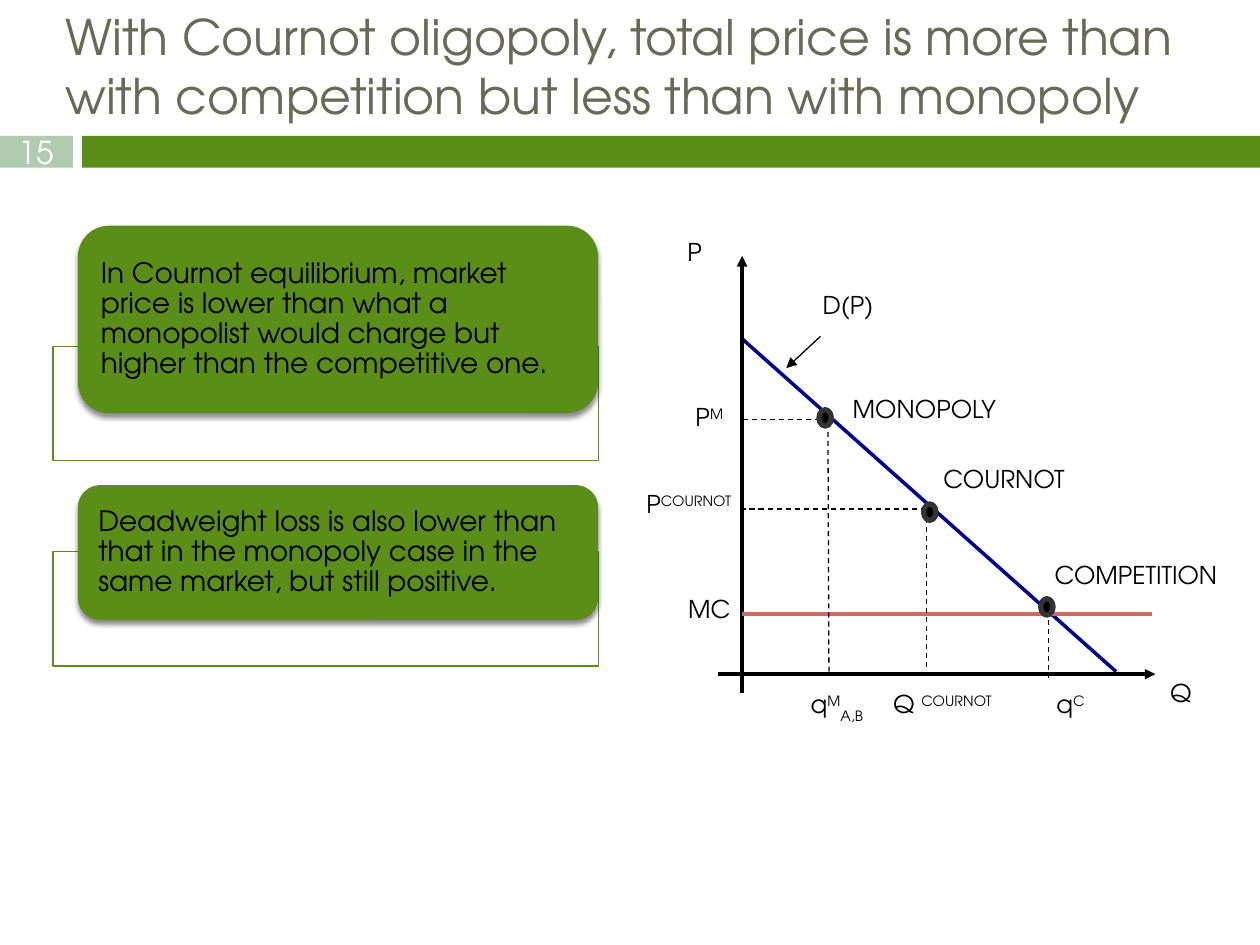
from dataclasses import dataclass

from lxml import etree
from pptx import Presentation
from pptx.dml.color import RGBColor
from pptx.enum import dml, shapes, text
from pptx.oxml import ns
from pptx.util import Cm, Pt

FONT = "TeX Gyre Adventor"
GREEN = RGBColor(0x5A, 0x8E, 0x19)
SAGE = RGBColor(0xB0, 0xCC, 0xB0)
OLIVE = RGBColor(0x67, 0x6A, 0x55)
NAVY = RGBColor(0x00, 0x00, 0x90)
RED = RGBColor(0xCF, 0x68, 0x68)
GRAY = RGBColor(0x33, 0x33, 0x33)
BLACK = RGBColor(0, 0, 0)
WHITE = RGBColor(0xFF, 0xFF, 0xFF)

RECT = shapes.MSO_SHAPE.RECTANGLE
ROUNDED = shapes.MSO_SHAPE.ROUNDED_RECTANGLE
OVAL = shapes.MSO_SHAPE.OVAL
LEFT, CENTER = text.PP_ALIGN.LEFT, text.PP_ALIGN.CENTER
TOP, MIDDLE = text.MSO_ANCHOR.TOP, text.MSO_ANCHOR.MIDDLE

# All coordinates below are centimetres.
AXIS_X, AXIS_Y = 14.96, 13.59
DOT_WIDTH, DOT_HEIGHT = 0.25, 0.33
TICK_TOP = 13.77


@dataclass
class Card:
    text: str
    top: float
    height: float
    frame_top: float


@dataclass
class Label:
    text: str
    left: float
    top: float
    width: float
    align: text.PP_ALIGN = LEFT
    sup: str = ""
    sub: str = ""


@dataclass
class Line:
    start: tuple[float, float]
    end: tuple[float, float]
    color: RGBColor = BLACK
    weight: float = 0.75
    dashed: bool = False
    arrow: bool = False


CARDS = [
    Card("In Cournot equilibrium, market price is lower than what a monopolist "
         "would charge but higher than the competitive one.", 4.55, 3.78, 6.98),
    Card("Deadweight loss is also lower than that in the monopoly case in the "
         "same market, but still positive.", 9.78, 2.72, 11.12),
]
LINES = [
    # Demand, marginal cost and axes
    Line((AXIS_X, 6.83), (22.5, 13.54), NAVY, 2),
    Line((16.54, 6.78), (15.85, 7.42), arrow=True),
    Line((AXIS_X, 13.97), (AXIS_X, 5.16), weight=2, arrow=True),
    Line((14.48, AXIS_Y), (23.29, AXIS_Y), weight=2, arrow=True),
    Line((AXIS_X, 12.37), (23.22, 12.37), RED, 2.25),
    # Guides from each outcome to the axes
    Line((16.54, 8.46), (AXIS_X, 8.46), dashed=True),
    Line((16.71, 13.54), (16.69, 8.51), dashed=True),
    Line((18.67, 10.26), (AXIS_X, 10.26), dashed=True),
    Line((18.67, 10.44), (18.67, 13.46), dashed=True),
    Line((21.13, 12.5), (21.13, 13.67), dashed=True),
]
OUTCOME_DOTS = [(16.51, 8.26), (18.62, 10.16), (20.98, 12.07)]
LABELS = [
    Label("P", 13.61, 4.65, 1.37),
    Label("Q", 23.34, 13.54, 1),
    Label("D(P)", 15.95, 5.72, 2.29, CENTER),
    Label("MONOPOLY", 16.94, 7.82, 4.19),
    Label("COURNOT", 18.77, 9.22, 4.24),
    Label("COMPETITION", 21.01, 11.15, 4.39),
    Label("P", 13.13, 7.98, 2.34, CENTER, sup="M"),
    Label("P", 12.27, 9.73, 3.23, CENTER, sup="COURNOT"),
    Label("MC", 13.13, 11.84, 2.34, CENTER),
    Label("q", 15.7, TICK_TOP, 2.34, CENTER, sup="M", sub="A,B"),
    Label("Q ", 17.55, TICK_TOP, 2.9, CENTER, sup="COURNOT"),
    Label("q", 20.12, TICK_TOP, 2.92, CENTER, sup="C"),
]


def write_text(box, words, *, size=14, color=BLACK, align=LEFT, anchor=TOP,
               inset=(0.25, 0.13), line_spacing=None, sup="", sub=""):
    """Write one paragraph, with an optional superscript and subscript."""
    frame = box.text_frame
    frame.word_wrap = True
    frame.vertical_anchor = anchor
    frame.margin_left = frame.margin_right = Cm(inset[0])
    frame.margin_top = frame.margin_bottom = Cm(inset[1])
    para = frame.paragraphs[0]
    para.alignment = align
    if line_spacing:
        para.line_spacing = line_spacing
    for part, baseline in ((words, 0), (sup, 30000), (sub, -30000)):
        if not part:
            continue
        span = para.add_run()
        span.text = part
        span.font.name, span.font.size = FONT, Pt(size)
        span.font.color.rgb = color
        if baseline:
            span._r.get_or_add_rPr().set("baseline", str(baseline))


def add_box(page, kind, left: float, top: float, width: float, height: float,
            fill: RGBColor, outline: RGBColor | None = None, weight: float = 1):
    box = page.shapes.add_shape(kind, Cm(left), Cm(top), Cm(width), Cm(height))
    box.shadow.inherit = False
    box.fill.solid()
    box.fill.fore_color.rgb = fill
    if outline is None:
        box.line.fill.background()
    else:
        box.line.color.rgb = outline
        box.line.width = Pt(weight)
    return box


def add_text_box(page, left: float, top: float, width: float, height: float):
    return page.shapes.add_textbox(Cm(left), Cm(top), Cm(width), Cm(height))


def add_drop_shadow(box) -> None:
    effects = box._element.spPr.find(ns.qn("a:effectLst"))
    shadow = etree.SubElement(effects, ns.qn("a:outerShdw"), blurRad=str(Pt(3)),
                              dist=str(Pt(2.4)), dir="5400000", rotWithShape="0")
    color = etree.SubElement(shadow, ns.qn("a:srgbClr"), val=str(BLACK))
    etree.SubElement(color, ns.qn("a:alpha"), val="45000")


def draw_card(page, card: Card) -> None:
    add_box(page, RECT, 1.07, card.frame_top, 11, 2.31, WHITE, GREEN, 0.79)
    box = add_box(page, ROUNDED, 1.57, card.top, 10.49, card.height, GREEN)
    add_drop_shadow(box)
    write_text(box, card.text, size=16, anchor=MIDDLE, inset=(0.28, 0),
               line_spacing=0.9)


def draw_line(page, line: Line) -> None:
    connector = page.shapes.add_connector(
        shapes.MSO_CONNECTOR.STRAIGHT, *map(Cm, line.start + line.end))
    connector.line.color.rgb = line.color
    connector.line.width = Pt(line.weight)
    if line.dashed:
        connector.line.dash_style = dml.MSO_LINE.DASH
    if line.arrow:
        etree.SubElement(connector.line._get_or_add_ln(), ns.qn("a:tailEnd"),
                         type="triangle")
    etree.SubElement(connector._element.spPr, ns.qn("a:effectLst"))


def draw_label(page, label: Label) -> None:
    box = add_text_box(page, label.left, label.top, label.width, 0.86)
    write_text(box, label.text, align=label.align, sup=label.sup, sub=label.sub)


def main() -> None:
    deck = Presentation()
    deck.slide_width, deck.slide_height = Cm(25.4), Cm(19.05)
    page = deck.slides.add_slide(deck.slide_layouts[6])

    # Header band, page number and title
    add_box(page, RECT, 1.65, 2.74, 23.75, 0.64, GREEN)
    number = add_box(page, RECT, 0, 2.74, 1.47, 0.64, SAGE)
    write_text(number, "15", size=18, color=WHITE, align=CENTER, anchor=MIDDLE,
               inset=(0, 0))
    title = add_text_box(page, 1.07, 0, 24.1, 1.65)
    write_text(title, "With Cournot oligopoly, total price is more than with "
               "competition but less than with monopoly", size=28, color=OLIVE)

    # Takeaways
    for card in CARDS:
        draw_card(page, card)

    # Price and quantity diagram
    for line in LINES:
        draw_line(page, line)
    for left, top in OUTCOME_DOTS:
        add_box(page, OVAL, left, top, DOT_WIDTH, DOT_HEIGHT, BLACK, GRAY, 3)
    for label in LABELS:
        draw_label(page, label)

    deck.save("out.pptx")


if __name__ == "__main__":
    main()
